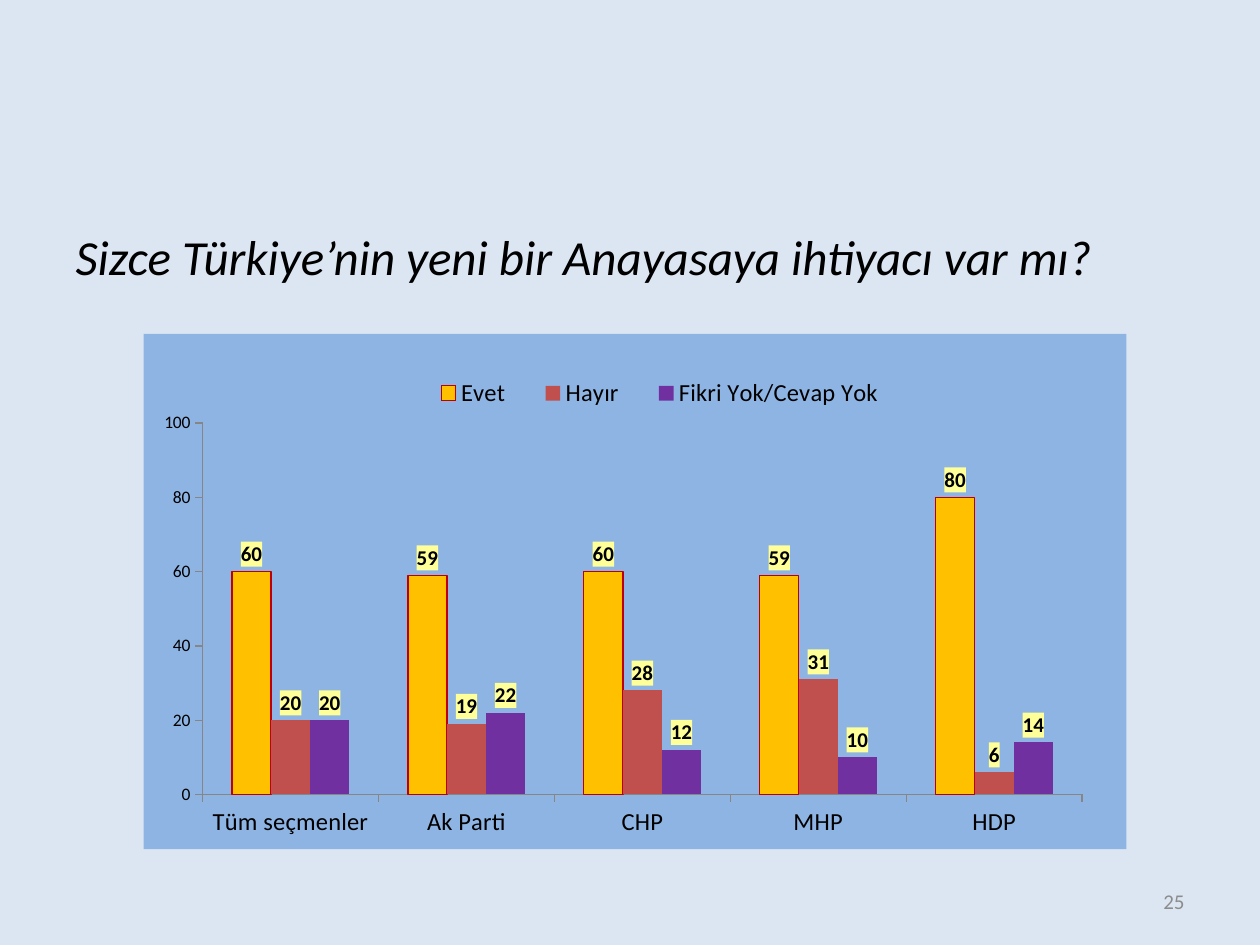
from dataclasses import dataclass

from lxml import etree
from pptx import Presentation
from pptx.chart.data import CategoryChartData as Data
from pptx.dml.color import RGBColor as Rgb
from pptx.enum.chart import XL_CHART_TYPE as Kind
from pptx.enum.chart import XL_LABEL_POSITION as Spot
from pptx.enum.chart import XL_LEGEND_POSITION as Side
from pptx.enum.chart import XL_TICK_MARK as Tick
from pptx.enum.text import MSO_ANCHOR as Anchor
from pptx.enum.text import PP_ALIGN as Align
from pptx.oxml import parse_xml
from pptx.oxml.ns import nsdecls, qn
from pptx.util import Inches, Pt


@dataclass(frozen=True)
class Theme:
    font: str = "Calibri"
    back: str = "DCE6F2"
    panel: str = "8EB4E3"
    ink: str = "000000"
    gray: str = "8C8C8C"
    axis: str = "868686"
    label: str = "FFFF99"
    edge: str = "C00000"
    bars: tuple = ("FFC000", "C0504D", "7030A0")
    head: int = 28
    text: int = 14
    note: int = 12
    tick: int = 10


CATS = ["Tüm seçmenler", "Ak Parti", "CHP", "MHP", "HDP"]
VOTES = {
    "Evet": (60, 59, 60, 59, 80),
    "Hayır": (20, 19, 28, 31, 6),
    "Fikri Yok/Cevap Yok": (20, 22, 12, 10, 14),
}


def fill_xml(color):
    """Solid fill without an outline, for chart parts."""
    return parse_xml(
        f'<c:spPr {nsdecls("c", "a")}><a:solidFill><a:srgbClr val="{color}"/>'
        "</a:solidFill><a:ln><a:noFill/></a:ln></c:spPr>"
    )


def place(part, index, box, inner=False):
    """Give a chart part a fixed box, in fractions of the chart."""
    for old in part.findall(qn("c:layout")):
        part.remove(old)
    layout = etree.Element(qn("c:layout"))
    manual = etree.SubElement(layout, qn("c:manualLayout"))
    rules = [("layoutTarget", "inner")] if inner else []
    rules += [("xMode", "edge"), ("yMode", "edge"), *zip("xywh", box)]
    for name, value in rules:
        etree.SubElement(manual, qn(f"c:{name}")).set("val", str(value))
    part.insert(index, layout)


class Deck:
    def __init__(self, theme):
        self.theme = theme
        self.show = Presentation()
        self.show.slide_width, self.show.slide_height = Inches(10), Inches(7.5)
        self.slide = self.show.slides.add_slide(self.show.slide_layouts[5])
        fill = self.slide.background.fill
        fill.solid()
        fill.fore_color.rgb = Rgb.from_string(theme.back)

    def style(self, font, size, color, bold=False, italic=False):
        font.name, font.size = self.theme.font, Pt(size)
        font.color.rgb = Rgb.from_string(color)
        font.bold, font.italic = bold, italic

    def label(self, shape, text, size, color, align, anchor, italic=False):
        frame = shape.text_frame
        frame.text = text
        frame.word_wrap, frame.vertical_anchor = True, anchor
        line = frame.paragraphs[0]
        line.alignment = align
        self.style(line.runs[0].font, size, color, italic=italic)

    def title(self, text, box):
        shape = self.slide.shapes.title
        shape.left, shape.top, shape.width, shape.height = map(Inches, box)
        self.label(shape, text, self.theme.head, self.theme.ink,
                   Align.LEFT, Anchor.TOP, italic=True)

    def number(self, text, box):
        shape = self.slide.shapes.add_textbox(*map(Inches, box))
        self.label(shape, text, self.theme.note, self.theme.gray,
                   Align.RIGHT, Anchor.MIDDLE)

    def chart(self, cats, rows, box):
        theme = self.theme
        data = Data()
        data.categories = cats
        for name, values in rows.items():
            data.add_series(name, values)
        chart = self.slide.shapes.add_chart(
            Kind.COLUMN_CLUSTERED, *map(Inches, box), data).chart
        chart.has_title = False
        self.style(chart.font, theme.tick, theme.ink)

        # Panel and plot area
        root = chart.element
        root.find(qn("c:chart")).addnext(fill_xml(theme.panel))
        area = next(root.iter(qn("c:plotArea")))
        place(area, 0, (0.06, 0.173, 0.895, 0.721), inner=True)

        # Legend
        chart.has_legend = True
        legend = chart.legend
        legend.position, legend.include_in_layout = Side.TOP, False
        self.style(legend.font, theme.text, theme.ink)
        place(next(root.iter(qn("c:legend"))), 1, (0.27, 0.07, 0.51, 0.09))

        # Axes
        scale = chart.value_axis
        scale.minimum_scale, scale.maximum_scale = 0, 100
        scale.major_unit = 20
        for axis, size in ((chart.category_axis, theme.text),
                           (scale, theme.tick)):
            axis.has_major_gridlines = False
            axis.major_tick_mark = Tick.OUTSIDE
            axis.format.line.color.rgb = Rgb.from_string(theme.axis)
            axis.format.line.width = Pt(0.75)
            self.style(axis.tick_labels.font, size, theme.ink)

        # Bars and their labels
        plot = chart.plots[0]
        plot.gap_width, plot.overlap = 150, 0
        plot.vary_by_categories = False
        for row, color in zip(plot.series, theme.bars):
            row.format.fill.solid()
            row.format.fill.fore_color.rgb = Rgb.from_string(color)
            labels = row.data_labels
            labels.show_value, labels.position = True, Spot.OUTSIDE_END
            self.style(labels.font, theme.note, theme.ink, bold=True)
        for mark in root.iter(qn("c:dLbls")):
            mark.find(qn("c:txPr")).addprevious(fill_xml(theme.label))
        first = plot.series[0].format.line
        first.color.rgb, first.width = Rgb.from_string(theme.edge), Pt(0.75)


def main():
    deck = Deck(Theme())
    deck.title("Sizce Türkiye’nin yeni bir Anayasaya ihtiyacı var mı?",
               (0.5, 1.75, 9, 0.8))
    deck.chart(CATS, VOTES, (1.14, 2.65, 7.8, 4.09))
    deck.number("25", (7.17, 6.95, 2.33, 0.4))
    deck.show.save("out.pptx")


if __name__ == "__main__":
    main()
